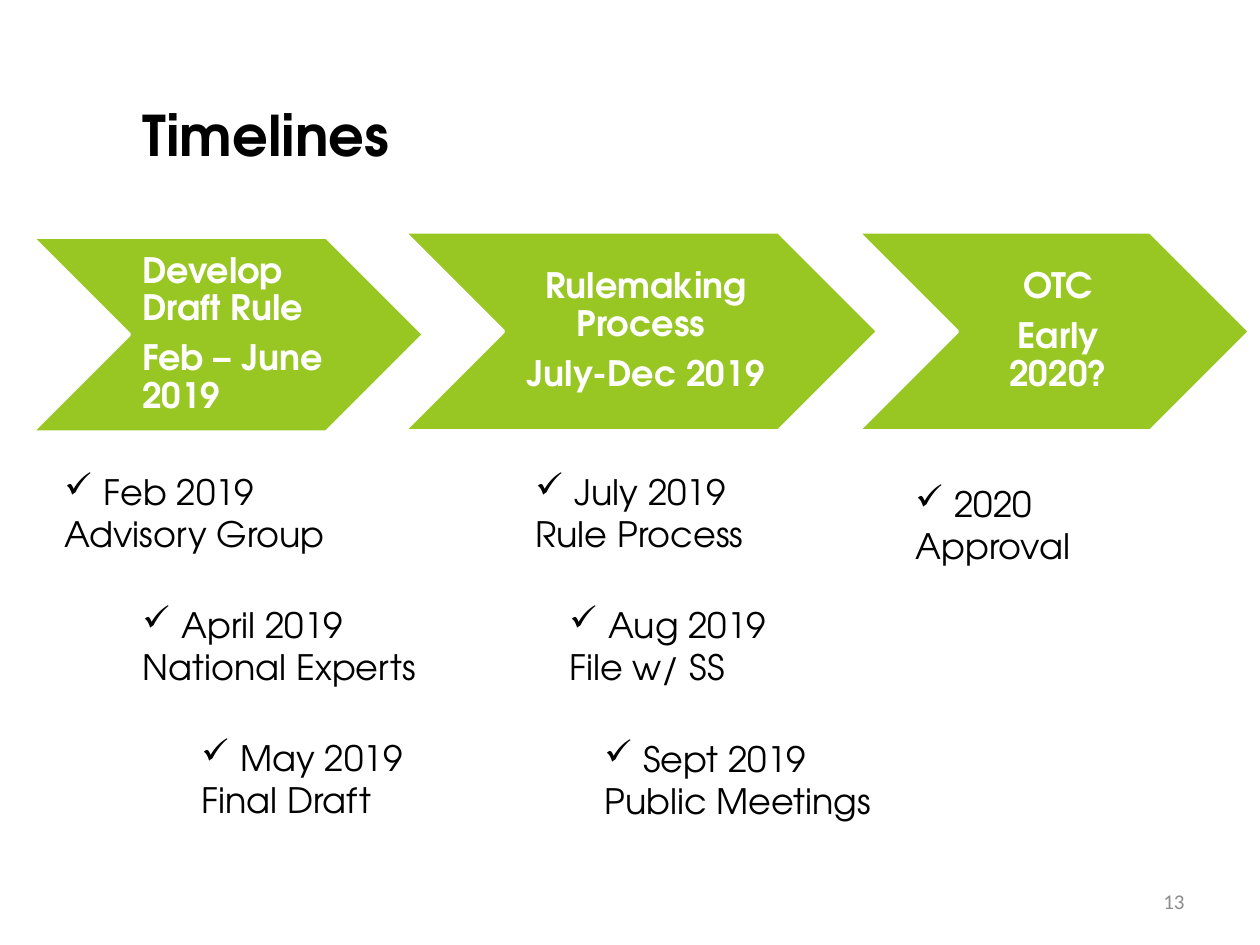
import pptx
import pptx.dml.color
import pptx.enum.shapes
import pptx.enum.text
import pptx.oxml.ns
import pptx.util
from lxml import etree

PX = 914400 / 126
ALIGN = pptx.enum.text.PP_ALIGN
MIDDLE = pptx.enum.text.MSO_ANCHOR.MIDDLE
TOP = pptx.enum.text.MSO_ANCHOR.TOP


def px(length):
    return pptx.util.Emu(round(length * PX))


def color(value):
    return pptx.dml.color.RGBColor.from_string(value)


class SlideBuilder:
    font = "TeX Gyre Adventor"
    green = "98C723"
    white = "FFFFFF"
    black = "000000"
    grey = "8C8C8C"
    body_size = 20

    def __init__(self, deck):
        self.slide = deck.slides.add_slide(deck.slide_layouts[5])

    def style(self, para, size, ink, bold=False, font=None, align=ALIGN.LEFT):
        para.alignment = align
        para.font.name = font or self.font
        para.font.size = pptx.util.Pt(size)
        para.font.bold = bold
        para.font.color.rgb = color(ink)

    def title(self, text, left, top, width, height):
        box = self.slide.shapes.title
        box.left, box.top, box.width, box.height = map(px, (left, top, width, height))
        box.text_frame.text = text
        box.text_frame.vertical_anchor = MIDDLE
        self.style(box.text_frame.paragraphs[0], 32, self.black, bold=True)

    def text_box(self, lines, left, top, width, height, anchor=TOP, wrap=True):
        """Add a text box with one paragraph per line and return its frame."""
        box = self.slide.shapes.add_textbox(*map(px, (left, top, width, height)))
        frame = box.text_frame
        frame.word_wrap = wrap
        frame.vertical_anchor = anchor
        frame.text = "\n".join(lines)
        return frame

    def phase(self, lines, left, top, width, height, text_width, align):
        """Add a chevron with its label laid over the middle."""
        chevron = self.slide.shapes.add_shape(
            pptx.enum.shapes.MSO_SHAPE.CHEVRON, *map(px, (left, top, width, height)))
        chevron.shadow.inherit = False
        chevron.fill.solid()
        chevron.fill.fore_color.rgb = color(self.green)
        chevron.line.color.rgb = color(self.white)
        chevron.line.width = pptx.util.Pt(2)

        frame = self.text_box(lines, left + height // 2 + 2, top, text_width, height, MIDDLE)
        frame.margin_left = px(11)
        frame.margin_top = frame.margin_right = frame.margin_bottom = px(4)
        for para in frame.paragraphs:
            para.line_spacing = 0.9
            para.space_after = pptx.util.Pt(7)
            self.style(para, self.body_size, self.white, bold=True, align=align)

    def milestone(self, date, event, left, top, width):
        """Add a check-marked date with the event on the line below."""
        frame = self.text_box((date, event), left, top, width, 97, wrap=False)
        properties = frame.paragraphs[0]._p.get_or_add_pPr()
        properties.set("marL", str(px(39)))
        properties.set("indent", str(-px(39)))
        bullet = etree.SubElement(properties, pptx.oxml.ns.qn("a:buChar"))
        bullet.set("char", "✓")
        for para in frame.paragraphs:
            self.style(para, self.body_size, self.black)

    def page_number(self, number, left, top, width, height):
        frame = self.text_box((number,), left, top, width, height, MIDDLE)
        self.style(frame.paragraphs[0], 12, self.grey, font="Calibri", align=ALIGN.RIGHT)


def main():
    deck = pptx.Presentation()
    deck.slide_width, deck.slide_height = px(1260), px(945)
    builder = SlideBuilder(deck)
    builder.title("Timelines", 130, 95, 462, 78)

    phases = [
        (("Develop Draft Rule", "Feb – June 2019"), 32, 237, 392, 195, 197, ALIGN.LEFT),
        (("Rulemaking Process ", "July-Dec 2019"), 404, 232, 474, 199, 275, ALIGN.CENTER),
        (("OTC", "Early 2020?"), 858, 232, 392, 199, 192, ALIGN.CENTER),
    ]
    for phase in phases:
        builder.phase(*phase)

    milestones = [
        ("Feb 2019", "Advisory Group", 52, 464, 289),
        ("April 2019", "National Experts", 130, 597, 300),
        ("May 2019", "Final Draft", 189, 730, 229),
        ("July 2019", "Rule Process", 523, 464, 236),
        ("Aug 2019", "File w/ SS", 557, 597, 224),
        ("Sept 2019", "Public Meetings", 592, 731, 295),
        ("2020", "Approval", 903, 476, 184),
    ]
    for milestone in milestones:
        builder.milestone(*milestone)

    builder.page_number("13", 903, 876, 294, 50)
    deck.save("out.pptx")


if __name__ == "__main__":
    main()
